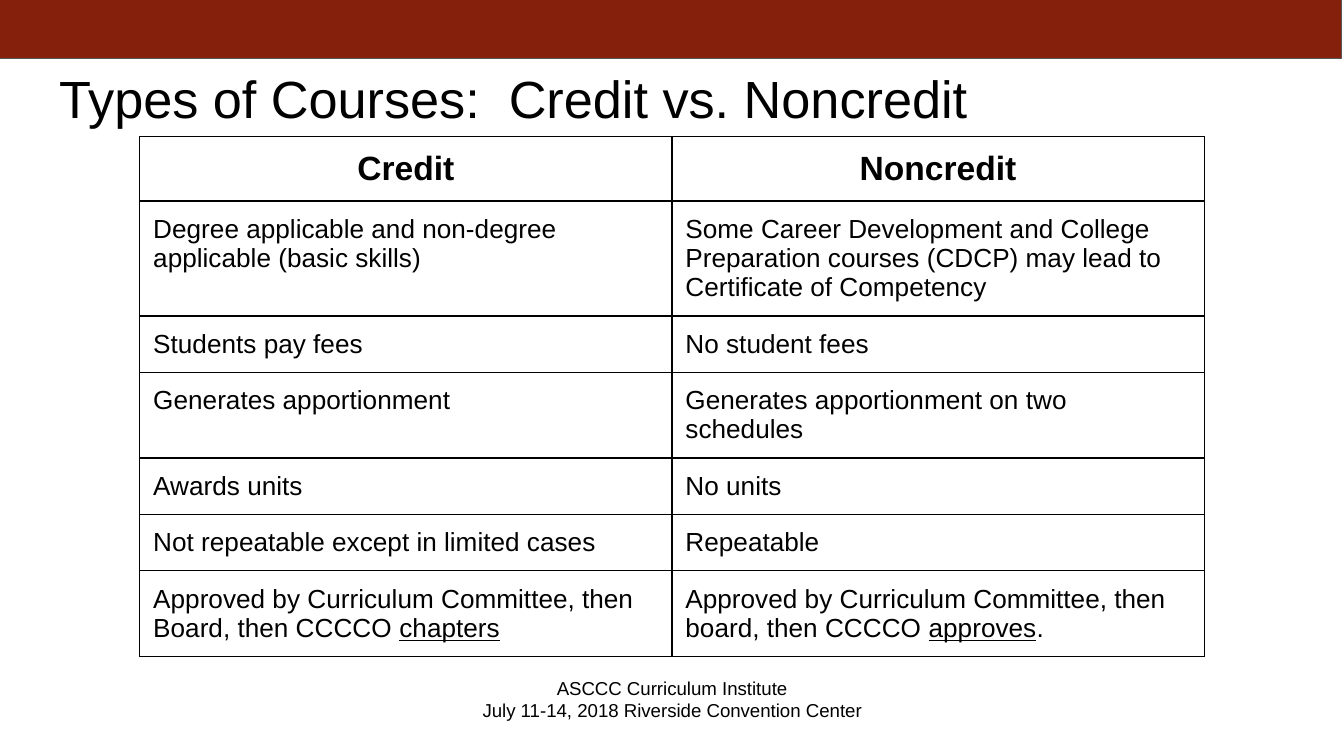
from lxml.etree import SubElement
from pptx import Presentation
from pptx.dml.color import RGBColor
from pptx.enum.shapes import MSO_SHAPE
from pptx.enum.text import MSO_ANCHOR, MSO_AUTO_SIZE, PP_ALIGN
from pptx.oxml.ns import qn
from pptx.util import Emu, Pt

EMU_PER_PX = 4572  # 200 px to the inch
SLIDE_WIDTH, SLIDE_HEIGHT = 2000, 1125
INSET = 20
FONT = "Arial"
BLACK = "000000"
HEADERS = ("Credit", "Noncredit")
# Each cell is a list of runs; underlined runs start with "_"
COMPARISON = [
    (["Degree applicable and non-degree applicable (basic skills)"],
     ["Some Career Development and College Preparation courses (CDCP) "
      "may lead to Certificate of Competency"]),
    (["Students pay fees"], ["No student fees"]),
    (["Generates apportionment"], ["Generates apportionment on two schedules"]),
    (["Awards units"], ["No units"]),
    (["Not repeatable except in limited cases"], ["Repeatable"]),
    (["Approved by Curriculum Committee, then Board, then CCCCO ", "_chapters"],
     ["Approved by Curriculum Committee, then board, then CCCCO ", "_approves", "."]),
]


def px(length):
    return Emu(length * EMU_PER_PX)


def color(value):
    return RGBColor.from_string(value)


def set_margins(target):
    for side in ("left", "top", "right", "bottom"):
        setattr(target, f"margin_{side}", px(INSET))


def format_paragraph(paragraph, size, align=PP_ALIGN.LEFT, bold=False):
    paragraph.alignment = align
    font = paragraph.font
    font.name, font.size, font.bold = FONT, Pt(size), bold
    font.color.rgb = color(BLACK)


def fill_frame(frame, text, size, align):
    frame.word_wrap = True
    frame.auto_size = MSO_AUTO_SIZE.NONE
    frame.vertical_anchor = MSO_ANCHOR.TOP
    set_margins(frame)
    paragraph = frame.paragraphs[0]
    paragraph.text = text
    format_paragraph(paragraph, size, align)


def add_top_bar(slide, left, top, width, height):
    bar = slide.shapes.add_shape(
        MSO_SHAPE.RECTANGLE, px(left), px(top), px(width), px(height))
    bar.shadow.inherit = False
    bar.fill.solid()
    bar.fill.fore_color.rgb = color("85200C")
    bar.line.color.rgb = color("595959")
    bar.line.width = Pt(0.75)


def place_title(slide, left, top, width, height):
    title = slide.shapes.title
    title.left, title.top = px(left), px(top)
    title.width, title.height = px(width), px(height)
    fill_frame(title.text_frame, "Types of Courses:  Credit vs. Noncredit",
               28, PP_ALIGN.LEFT)


def add_event_line(slide, left, top, width, height):
    box = slide.shapes.add_textbox(px(left), px(top), px(width), px(height))
    fill_frame(box.text_frame,
               "ASCCC Curriculum Institute\nJuly 11-14, 2018 Riverside Convention Center",
               10, PP_ALIGN.CENTER)


def add_borders(cell):
    properties = cell._tc.get_or_add_tcPr()
    for position, side in enumerate(("lnL", "lnR", "lnT", "lnB")):
        line = properties.makeelement(qn(f"a:{side}"), {"w": str(Pt(0.75))})
        fill = SubElement(line, qn("a:solidFill"))
        SubElement(fill, qn("a:srgbClr"), val=BLACK)
        properties.insert(position, line)


def fill_cell(cell, runs, size, align=PP_ALIGN.LEFT, bold=False):
    set_margins(cell)
    cell.fill.background()
    add_borders(cell)
    paragraph = cell.text_frame.paragraphs[0]
    format_paragraph(paragraph, size, align, bold)
    for text in runs:
        run = paragraph.add_run()
        run.text = text.removeprefix("_")
        if text.startswith("_"):
            run.font.underline = True


def add_comparison_table(slide, left, top, width, row_height):
    row_count = len(COMPARISON) + 1
    table = slide.shapes.add_table(
        row_count, len(HEADERS), px(left), px(top),
        px(width), px(row_height * row_count)).table
    table.first_row = table.horz_banding = False
    # Header row
    for column, header in enumerate(HEADERS):
        fill_cell(table.cell(0, column), [header], 18, PP_ALIGN.CENTER, bold=True)
    # Body rows grow to fit their text
    for row, cells in enumerate(COMPARISON, start=1):
        for column, runs in enumerate(cells):
            fill_cell(table.cell(row, column), runs, 14)


def main():
    presentation = Presentation()
    presentation.slide_width = px(SLIDE_WIDTH)
    presentation.slide_height = px(SLIDE_HEIGHT)
    slide = presentation.slides.add_slide(presentation.slide_layouts[5])
    add_top_bar(slide, -4, -11, SLIDE_WIDTH, 98)
    place_title(slide, 68, 78, 1864, 126)
    add_event_line(slide, 0, 987, SLIDE_WIDTH, 96)
    add_comparison_table(slide, 208, 203, 1584, 84)
    presentation.save("out.pptx")


if __name__ == "__main__":
    main()
